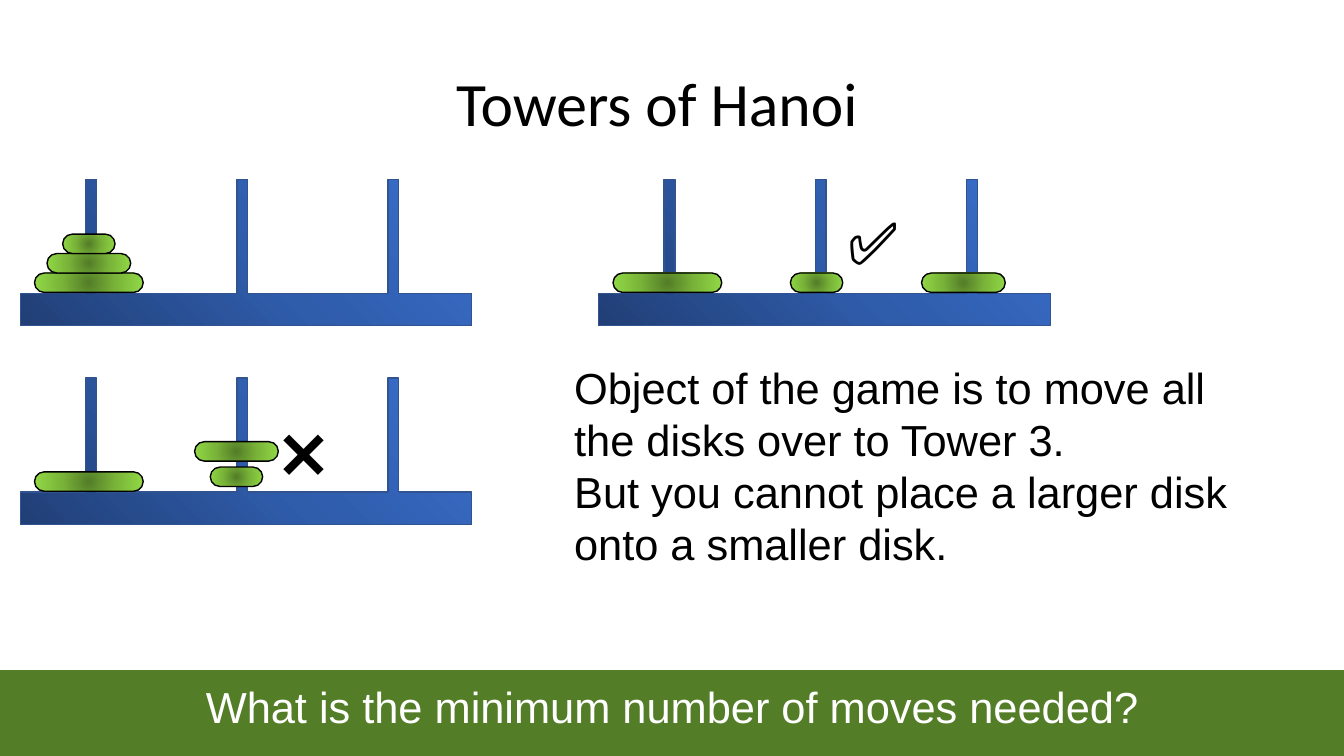
from lxml import etree
from pptx import Presentation
from pptx.dml.color import RGBColor
from pptx.enum.shapes import MSO_SHAPE
from pptx.enum.text import MSO_ANCHOR, PP_ALIGN
from pptx.oxml.ns import qn
from pptx.util import Cm, Pt

ROUNDED, RECTANGLE = MSO_SHAPE.ROUNDED_RECTANGLE, MSO_SHAPE.RECTANGLE
TOP, MIDDLE = MSO_ANCHOR.TOP, MSO_ANCHOR.MIDDLE
LEFT, CENTER = PP_ALIGN.LEFT, PP_ALIGN.CENTER

PAGE_WIDTH, PAGE_HEIGHT = 33.87, 19.05
BOARD_WIDTH, BOARD_HEIGHT, BASE_TOP = 11.38, 3.68, 2.87
PEG_LEFTS = [1.65 + 3.81 * i for i in range(3)]
PEG_WIDTH = 0.27
DISK_HEIGHT = 0.49
DISK_WIDTHS = {"large": 2.74, "medium": 2.11, "small": 1.32}
FLOOR = 2.36  # top of a disk that lies on the base

# Each board: left, top, then its disks as (size, centre, top) within the board
BOARDS = [
    (0.51, 4.52, [("large", 1.73, FLOOR),
                  ("medium", 1.73, FLOOR - DISK_HEIGHT),
                  ("small", 1.73, FLOOR - 2 * DISK_HEIGHT)]),
    (15.09, 4.52, [("large", 1.73, FLOOR),
                   ("medium", 9.19, FLOOR),
                   ("small", 5.49, FLOOR)]),
    (0.51, 9.53, [("large", 1.73, FLOOR),
                  ("medium", 5.45, 1.6),
                  ("small", 5.45, 2.24)]),
]


def color(value):
    return RGBColor.from_string(value)


def write(frame, text, font="Arial", size=31, ink="000000", align=LEFT,
          anchor=TOP, margin=0.25, spacing=None):
    """Fill a text frame, one paragraph per line of text."""
    frame.word_wrap = True
    frame.vertical_anchor = anchor
    frame.margin_left = frame.margin_right = Cm(0.25)
    frame.margin_top = frame.margin_bottom = Cm(margin)
    for i, line in enumerate(text.split("\n")):
        para = frame.add_paragraph() if i else frame.paragraphs[0]
        para.alignment = align
        para.line_spacing = spacing
        span = para.add_run()
        span.text = line
        span.font.name = font
        span.font.size = Pt(size)
        span.font.color.rgb = color(ink)


class HanoiSlide:
    BLUES = ("213F76", "2F5CAB", "3A6FCD")
    GREENS = ("547D28", "7AB539", "92D946")
    BOARD_LINE, DISK_LINE = "31538F", "000000"
    FROM_CORNER = dict(l="0", t="100000", r="100000", b="0")
    FROM_CENTER = dict(l="50000", t="50000", r="50000", b="50000")

    def __init__(self, page):
        self.page = page

    def shade(self, shape, colors, focus, line):
        """Give a shape a radial gradient and a thin outline."""
        shape.shadow.inherit = False
        shape.fill.gradient()
        gradient = shape._element.spPr.find(qn("a:gradFill"))
        gradient.clear()
        stops = etree.SubElement(gradient, qn("a:gsLst"))
        for i, value in enumerate(colors):
            stop = etree.SubElement(stops, qn("a:gs"), pos=str(50000 * i))
            etree.SubElement(stop, qn("a:srgbClr"), val=value)
        radial = etree.SubElement(gradient, qn("a:path"))
        radial.set("path", "circle")
        etree.SubElement(radial, qn("a:fillToRect"), **focus)
        shape.line.color.rgb = color(line)
        shape.line.width = Pt(1)

    def board(self, left, top):
        """Draw the base and its three pegs as one outline."""
        points = [(0, BASE_TOP)]
        for peg in PEG_LEFTS:
            right = peg + PEG_WIDTH
            points += [(peg, BASE_TOP), (peg, 0), (right, 0), (right, BASE_TOP)]
        points += [(BOARD_WIDTH, BASE_TOP), (BOARD_WIDTH, BOARD_HEIGHT),
                   (0, BOARD_HEIGHT)]
        corners = [(Cm(left + x), Cm(top + y)) for x, y in points]
        builder = self.page.shapes.build_freeform(*corners[0])
        builder.add_line_segments(corners[1:], close=True)
        self.shade(builder.convert_to_shape(), self.BLUES, self.FROM_CORNER,
                   self.BOARD_LINE)

    def disk(self, size, center, top):
        width = DISK_WIDTHS[size]
        shape = self.page.shapes.add_shape(
            ROUNDED, Cm(center - width / 2), Cm(top), Cm(width), Cm(DISK_HEIGHT))
        shape.adjustments[0] = 0.5
        self.shade(shape, self.GREENS, self.FROM_CENTER, self.DISK_LINE)

    def text(self, content, left, top, width, height, **style):
        box = self.page.shapes.add_textbox(Cm(left), Cm(top), Cm(width), Cm(height))
        write(box.text_frame, content, **style)

    def banner(self, content, top, height):
        bar = self.page.shapes.add_shape(
            RECTANGLE, 0, Cm(top), Cm(PAGE_WIDTH), Cm(height))
        bar.shadow.inherit = False
        bar.fill.solid()
        bar.fill.fore_color.rgb = color(self.GREENS[0])
        bar.line.fill.background()
        write(bar.text_frame, content, ink="FFFFFF", align=CENTER)


def main():
    deck = Presentation()
    deck.slide_width, deck.slide_height = Cm(PAGE_WIDTH), Cm(PAGE_HEIGHT)
    slide = HanoiSlide(deck.slides.add_slide(deck.slide_layouts[6]))

    slide.text("Towers of Hanoi", 0.97, 0.84, 31.17, 3.68, font="Calibri",
               size=44, align=CENTER, anchor=MIDDLE, margin=0.13, spacing=0.9)
    slide.text("Object of the game is to move all the disks over to Tower 3.\n"
               "But you cannot place a larger disk onto a smaller disk.",
               14.22, 8.84, 17.65, 6.32)
    for left, top, disks in BOARDS:
        slide.board(left, top)
        for size, center, height in disks:
            slide.disk(size, left + center, top + height)
    slide.text("✅", 21.11, 4.93, 3.91, 2.01, font="Calibri", size=42)
    slide.text("❌", 6.83, 10.08, 3.02, 2.57, font="Calibri", size=50)
    slide.banner("What is the minimum number of moves needed?", 16.89, 2.16)

    deck.save("out.pptx")


if __name__ == "__main__":
    main()
